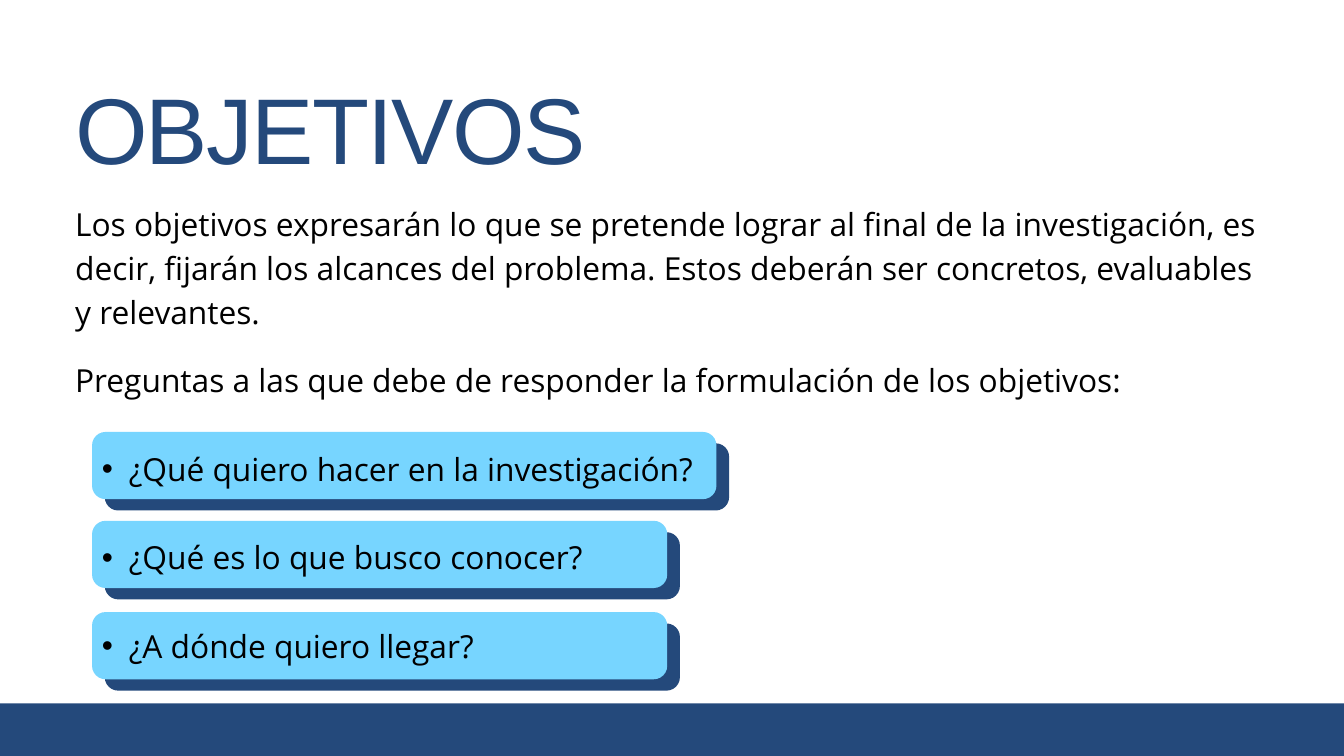
from lxml.etree import SubElement
from pptx import Presentation
from pptx.dml.color import RGBColor
from pptx.enum.shapes import MSO_SHAPE as Kind
from pptx.enum.text import MSO_ANCHOR as Anchor, MSO_AUTO_SIZE as Fit, PP_ALIGN as Align
from pptx.oxml.ns import qn
from pptx.util import Cm, Pt

# Content
TITLE = "OBJETIVOS"
INTRO = ("Los objetivos expresarán lo que se pretende lograr al final de la "
         "investigación, es decir, fijarán los alcances del problema. Estos "
         "deberán ser concretos, evaluables y relevantes.")
LEAD = "Preguntas a las que debe de responder la formulación de los objetivos:"
ASKS = ["¿Qué quiero hacer en la investigación?",
        "¿Qué es lo que busco conocer?",
        "¿A dónde quiero llegar?"]
CARDS = [(16.33, 23.6), (19.69, 21.74), (23.14, 21.74)]  # top, width

NAVY, SKY, BLACK = "24497B", "77D5FF", "000000"
WIDE, HIGH = 50.8, 28.58
LEFT, TEXT_W = 2.84, 45.09
CARD_X, CARD_H, SHIFT = 3.48, 2.54, (0.48, 0.43)
BAR_Y = 26.59
LINE = 47.6


def color(code):
    return RGBColor.from_string(code)


def block(kind, x, y, w, h, code):
    shape = slide.shapes.add_shape(kind, Cm(x), Cm(y), Cm(w), Cm(h))
    shape.shadow.inherit = False
    shape.fill.solid()
    shape.fill.fore_color.rgb = color(code)
    shape.line.fill.background()
    return shape


def setup(frame):
    frame.margin_left = frame.margin_right = 0
    frame.margin_top = frame.margin_bottom = 0
    frame.word_wrap = True
    frame.auto_size = Fit.NONE
    frame.vertical_anchor = Anchor.TOP


def style(para, font, size, code, line):
    para.alignment = Align.LEFT
    para.line_spacing = Pt(line)
    for run in para.runs:
        run.font.name = font
        run.font.size = Pt(size)
        run.font.color.rgb = color(code)


def bullet(para):
    props = para._p.get_or_add_pPr()
    props.set("marL", str(Cm(2.03)))
    props.set("indent", str(-Cm(1.02)))
    SubElement(props, qn("a:buFont")).set("typeface", "Arial")
    SubElement(props, qn("a:buChar")).set("char", "•")


def text(y, h, lines):
    box = slide.shapes.add_textbox(Cm(LEFT), Cm(y), Cm(TEXT_W), Cm(h))
    frame = box.text_frame
    frame.text = "\n".join(lines)
    setup(frame)
    for para in frame.paragraphs:
        style(para, "Open Sans", 34, BLACK, LINE)
    return frame


deck = Presentation()
deck.slide_width, deck.slide_height = Cm(WIDE), Cm(HIGH)
slide = deck.slides.add_slide(deck.slide_layouts[5])

# Title
title = slide.shapes.title
title.left, title.top, title.width, title.height = Cm(LEFT), Cm(3.38), Cm(26.7), Cm(3.68)
title.text_frame.text = TITLE
setup(title.text_frame)
head = title.text_frame.paragraphs[0]
style(head, "Arial", 100, NAVY, 100)
head.runs[0].font._element.set("spc", "-180")

# Cards, each over a shifted navy one
for top, width in CARDS:
    for dx, dy, code in [(*SHIFT, NAVY), (0, 0, SKY)]:
        card = block(Kind.ROUNDED_RECTANGLE, CARD_X + dx, top + dy, width, CARD_H, code)
        card.adjustments[0] = 0.2

# Bottom bar
block(Kind.RECTANGLE, 0, BAR_Y, WIDE, HIGH - BAR_Y, NAVY)

# Body text and questions, one empty line apart
text(7.49, 4.95, [INTRO])
for ask in text(13.39, 11.61, [LEAD, *ASKS]).paragraphs[1:]:
    ask.level = 1
    ask.space_before = Pt(LINE)
    bullet(ask)

deck.save("out.pptx")
